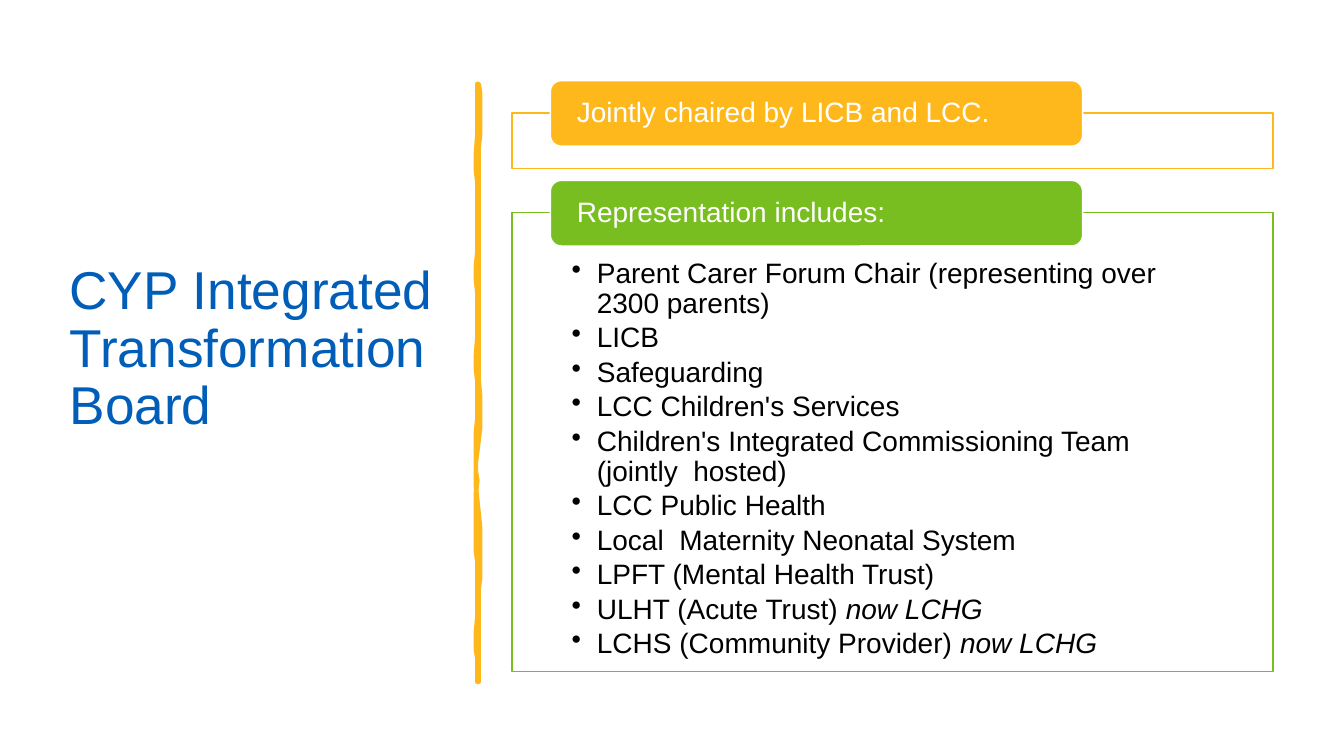
from pptx import Presentation
from pptx.dml.color import RGBColor
from pptx.enum.shapes import MSO_SHAPE
from pptx.enum.text import MSO_ANCHOR, MSO_AUTO_SIZE, PP_ALIGN
from pptx.util import Pt
from lxml import etree

RECTANGLE, ROUNDED = MSO_SHAPE.RECTANGLE, MSO_SHAPE.ROUNDED_RECTANGLE
TOP, MIDDLE = MSO_ANCHOR.TOP, MSO_ANCHOR.MIDDLE
LEFT = PP_ALIGN.LEFT
NO_FIT = MSO_AUTO_SIZE.NONE

BLUE = RGBColor(0x00, 0x5E, 0xB8)
YELLOW = RGBColor(0xFF, 0xB8, 0x1C)
GREEN = RGBColor(0x78, 0xBE, 0x20)
WHITE = RGBColor(0xFF, 0xFF, 0xFF)
BLACK = RGBColor(0x00, 0x00, 0x00)
FONT = "Arial"

# Content: plain text and an italic ending for each member
TITLE = "CYP Integrated Transformation Board"
MEMBERS = [
    ("Parent Carer Forum Chair (representing over 2300 parents)", ""),
    ("LICB", ""),
    ("Safeguarding", ""),
    ("LCC Children's Services", ""),
    ("Children's Integrated Commissioning Team\v(jointly  hosted)", ""),
    ("LCC Public Health", ""),
    ("Local  Maternity Neonatal System", ""),
    ("LPFT (Mental Health Trust)", ""),
    ("ULHT (Acute Trust) ", "now LCHG"),
    ("LCHS (Community Provider) ", "now LCHG"),
]
# Heading, colour, frame top, frame height, members
CARDS = [
    ("Jointly chaired by LICB and LCC.", YELLOW, 80.6, 39.6, []),
    ("Representation includes:", GREEN, 151.9, 327.6, MEMBERS),
]
FRAME_LEFT, FRAME_WIDTH = 365.8, 543.6
TAB_LEFT, TAB_WIDTH, TAB_HEIGHT, TAB_RISE = 393.1, 380.2, 46.8, 23

# Hand-drawn divider: each curve is two control points and an end point
DIVIDER_START = (342, 60.5)
DIVIDER_CURVES = [
    ((343.4, 73.4), (343.4, 85.7), (342, 105.1)),
    ((340.6, 124.6), (342.7, 140.4), (342, 162.7)),
    ((341.3, 185), (342, 188.6), (342, 211.7)),
    ((341.3, 234), (343.4, 246.2), (342, 256.3)),
    ((340.6, 266.4), (344.9, 298.1), (342, 313.9)),
    ((339.1, 329), (339.8, 348.5), (342, 367.2)),
    ((343.4, 385.9), (343.4, 406.1), (342, 420.5)),
    ((340.6, 434.2), (342.7, 468), (342, 486.7)),
    ((341.3, 486.7), (340.6, 486.7), (340.6, 486.7)),
    ((341.3, 465.1), (339.1, 463.7), (340.6, 441.4)),
    ((341.3, 419.8), (341.3, 410.4), (340.6, 401)),
    ((339.8, 391.7), (339.8, 356.4), (340.6, 343.4)),
    ((340.6, 330.5), (339.1, 320.4), (340.6, 298.8)),
    ((341.3, 277.9), (339.8, 268.6), (340.6, 241.2)),
    ((341.3, 214.6), (339.8, 202.3), (340.6, 180)),
    ((341.3, 157), (342, 144), (340.6, 130.3)),
    ((338.4, 117.4), (343.4, 74.9), (340.6, 60.5)),
]
CURVE_STEPS = 6


def flatten(start, curves):
    points = []
    for first, second, end in curves:
        for step in range(1, CURVE_STEPS + 1):
            t = step / CURVE_STEPS
            weights = ((1 - t) ** 3, 3 * t * (1 - t) ** 2, 3 * t * t * (1 - t), t ** 3)
            corners = (start, first, second, end)
            points.append(tuple(sum(w * c[axis] for w, c in zip(weights, corners))
                                for axis in (0, 1)))
        start = end
    return points


def paint(shape, fill, line, width):
    shape.shadow.inherit = False
    shape.fill.solid()
    shape.fill.fore_color.rgb = fill
    shape.line.color.rgb = line
    shape.line.width = Pt(width)


def set_frame(shape, anchor, margins):
    frame = shape.text_frame
    frame.word_wrap = True
    frame.auto_size = NO_FIT
    frame.vertical_anchor = anchor
    (frame.margin_left, frame.margin_top,
     frame.margin_right, frame.margin_bottom) = [Pt(margin) for margin in margins]
    return frame


def style(paragraph, size, color, space_after=0):
    paragraph.alignment = LEFT
    paragraph.line_spacing = 0.9
    paragraph.space_before = Pt(0)
    paragraph.space_after = Pt(space_after)
    paragraph.font.name = FONT
    paragraph.font.size = Pt(size)
    paragraph.font.color.rgb = color


def add_bullet(paragraph):
    properties = paragraph._p.get_or_add_pPr()
    properties.set("marL", str(Pt(18)))
    properties.set("indent", str(-Pt(18)))
    namespace = properties.nsmap["a"]
    etree.SubElement(properties, f"{{{namespace}}}buChar", char="•")


def add_card(slide, heading, color, top, height, members):
    # Outlined frame with the member list
    box = slide.shapes.add_shape(RECTANGLE, Pt(FRAME_LEFT), Pt(top),
                                 Pt(FRAME_WIDTH), Pt(height))
    paint(box, WHITE, color, 1)
    frame = set_frame(box, TOP, (42.5, 33.1, 42.5, 11.5))
    for index, (text, ending) in enumerate(members):
        paragraph = frame.add_paragraph() if index else frame.paragraphs[0]
        paragraph.text = text
        paragraph.level = 1
        add_bullet(paragraph)
        style(paragraph, 20, BLACK, 3)
        if ending:
            run = paragraph.add_run()
            run.text = ending
            run.font.italic = True

    # Heading tab over the frame's top edge
    tab = slide.shapes.add_shape(ROUNDED, Pt(TAB_LEFT), Pt(top - TAB_RISE),
                                 Pt(TAB_WIDTH), Pt(TAB_HEIGHT))
    paint(tab, color, WHITE, 1)
    frame = set_frame(tab, MIDDLE, (16.6, 0, 16.6, 0))
    frame.text = heading
    style(frame.paragraphs[0], 20, WHITE)


def main():
    presentation = Presentation()
    presentation.slide_width, presentation.slide_height = Pt(960), Pt(540)
    slide = presentation.slides.add_slide(presentation.slide_layouts[5])

    # Title
    title = slide.shapes.title
    title.left, title.top, title.width, title.height = Pt(49.7), Pt(50.4), Pt(269.3), Pt(440)
    frame = set_frame(title, MIDDLE, (0, 0, 0, 41))
    frame.text = TITLE
    style(frame.paragraphs[0], 38, BLUE)

    # Divider
    builder = slide.shapes.build_freeform(*DIVIDER_START, scale=Pt(1))
    builder.add_line_segments(flatten(DIVIDER_START, DIVIDER_CURVES), close=True)
    paint(builder.convert_to_shape(), YELLOW, YELLOW, 3.25)

    # Cards
    for card in CARDS:
        add_card(slide, *card)

    presentation.save("out.pptx")


if __name__ == "__main__":
    main()
